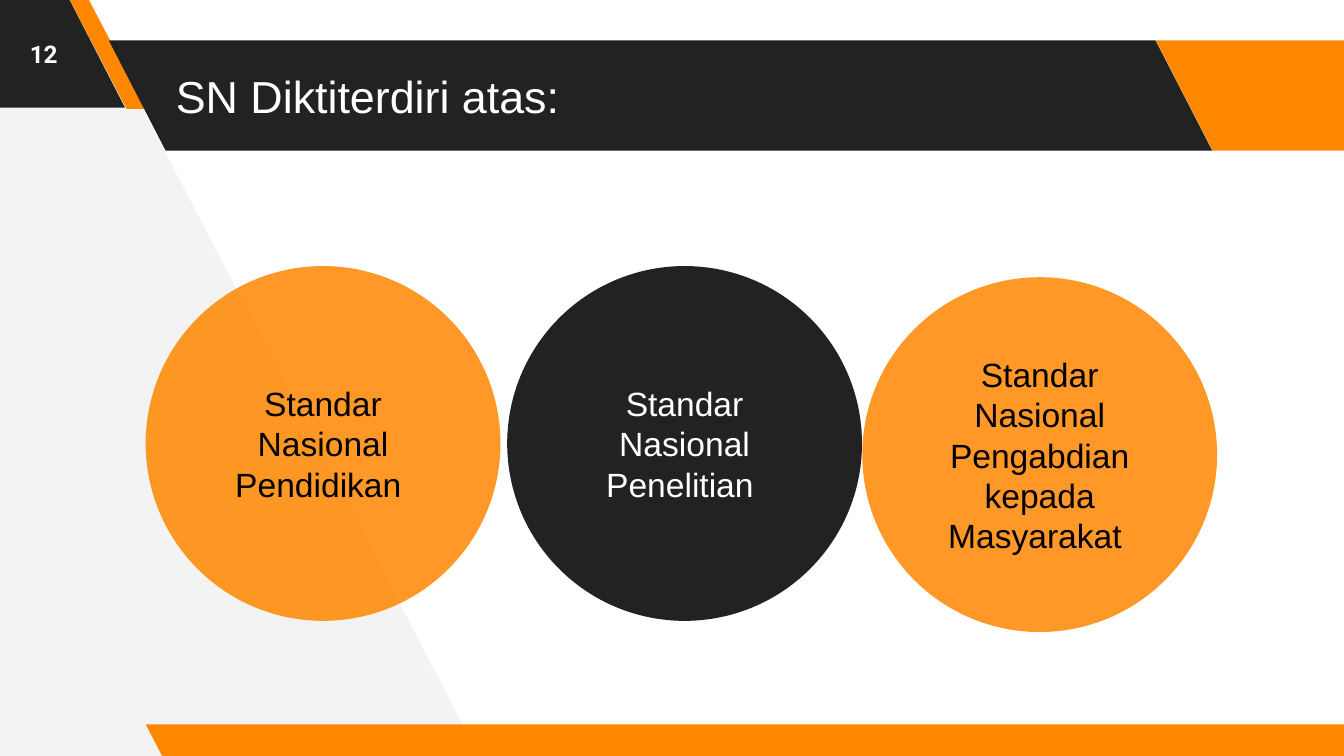
from dataclasses import dataclass
from typing import Optional

from lxml.etree import SubElement
from pptx import Presentation
from pptx.dml.color import RGBColor
from pptx.enum.shapes import MSO_SHAPE
from pptx.enum.text import MSO_ANCHOR, PP_ALIGN
from pptx.oxml.ns import qn
from pptx.util import Inches, Pt

DARK = RGBColor(0x22, 0x22, 0x22)
ORANGE = RGBColor(0xFF, 0x87, 0x00)
PALE = RGBColor(0xF3, 0xF3, 0xF3)
WHITE = RGBColor(0xFF, 0xFF, 0xFF)
BLACK = RGBColor(0x00, 0x00, 0x00)

SLIDE_WIDTH = Inches(10)
SLIDE_HEIGHT = SLIDE_WIDTH * 9 // 16
GRID_COLUMNS = 100
CELL = SLIDE_WIDTH / GRID_COLUMNS
BAND_HEIGHT = 8.2
BAND_TOP = 3
DIAMETER = 26.4
SLANT = 0.515


@dataclass(frozen=True)
class Box:
    column: float
    row: float
    columns: float
    rows: float

    def lengths(self) -> list[int]:
        return [cells(value) for value in (self.column, self.row, self.columns, self.rows)]


@dataclass(frozen=True)
class Band:
    box: Box
    color: RGBColor
    slant: float = SLANT


@dataclass(frozen=True)
class Circle:
    text: str
    column: float
    row: float
    fill: RGBColor
    font_color: RGBColor
    opacity: Optional[int] = None


@dataclass(frozen=True)
class Lettering:
    size: float
    color: RGBColor
    font: str = "Arial"
    bold: bool = False
    alignment: PP_ALIGN = PP_ALIGN.CENTER


BACKDROP = [(35.6, 56.2), (6.2, -0.4), (-0.6, -0.4), (-0.2, 56.6)]

BANDS = [
    Band(Box(-9.9, -0.2, 19.2, BAND_HEIGHT), DARK),
    Band(Box(5.15, -0.1, 5.7, BAND_HEIGHT), ORANGE, 0.75),
    Band(Box(8.1, BAND_TOP, 82.1, BAND_HEIGHT), DARK),
    Band(Box(86, BAND_TOP, 19.2, BAND_HEIGHT), ORANGE),
    Band(Box(10.85, 53.9, 91.5, 2.5), ORANGE),
]

CIRCLES = [
    Circle("Standar Nasional Penelitian ", 37.74, 19.8, DARK, WHITE),
    Circle("Standar Nasional Pendidikan ", 10.84, 19.8, ORANGE, BLACK, 85),
    Circle("Standar Nasional Pengabdian kepada Masyarakat ", 64.16, 20.63, ORANGE, BLACK, 85),
]


def cells(count: float) -> int:
    return round(count * CELL)


def paint(shape, color: RGBColor, opacity: Optional[int] = None) -> None:
    shape.shadow.inherit = False
    shape.fill.solid()
    shape.fill.fore_color.rgb = color
    shape.line.fill.background()
    if opacity is not None:
        color_element = shape._element.spPr.find(qn("a:solidFill"))[0]
        SubElement(color_element, qn("a:alpha"), val=str(opacity * 1000))


def write(shape, text: str, lettering: Lettering) -> None:
    frame = shape.text_frame
    frame.text = text
    frame.word_wrap = True
    frame.vertical_anchor = MSO_ANCHOR.MIDDLE
    frame.margin_left = frame.margin_right = cells(1)
    frame.margin_top = frame.margin_bottom = cells(1)
    paragraph = frame.paragraphs[0]
    paragraph.alignment = lettering.alignment
    font = paragraph.runs[0].font
    font.name = lettering.font
    font.size = Pt(lettering.size)
    font.bold = lettering.bold
    font.color.rgb = lettering.color


def draw_backdrop(slide, points: list[tuple[float, float]]) -> None:
    corners = [(cells(column), cells(row)) for column, row in points]
    builder = slide.shapes.build_freeform(*corners[0])
    builder.add_line_segments(corners[1:], close=True)
    paint(builder.convert_to_shape(), PALE)


def draw_band(slide, band: Band) -> None:
    shape = slide.shapes.add_shape(MSO_SHAPE.PARALLELOGRAM, *band.box.lengths())
    shape.adjustments[0] = band.slant
    shape._element.spPr.xfrm.set("flipH", "1")
    paint(shape, band.color)


def draw_circle(slide, circle: Circle) -> None:
    box = Box(circle.column, circle.row, DIAMETER, DIAMETER)
    shape = slide.shapes.add_shape(MSO_SHAPE.OVAL, *box.lengths())
    paint(shape, circle.fill, circle.opacity)
    write(shape, circle.text, Lettering(18, circle.font_color))


def draw_label(slide, box: Box, text: str, lettering: Lettering) -> None:
    write(slide.shapes.add_textbox(*box.lengths()), text, lettering)


def main() -> None:
    presentation = Presentation()
    presentation.slide_width = SLIDE_WIDTH
    presentation.slide_height = SLIDE_HEIGHT
    slide = presentation.slides.add_slide(presentation.slide_layouts[6])

    draw_backdrop(slide, BACKDROP)
    for band in BANDS:
        draw_band(slide, band)
    draw_label(slide, Box(12.1, BAND_TOP, 73.5, BAND_HEIGHT), "SN Diktiterdiri atas:",
               Lettering(24, WHITE, alignment=PP_ALIGN.LEFT))
    for circle in CIRCLES:
        draw_circle(slide, circle)
    draw_label(slide, Box(0, 0, 6.5, 8), "12", Lettering(13, WHITE, "Roboto", bold=True))

    presentation.save("out.pptx")


if __name__ == "__main__":
    main()
